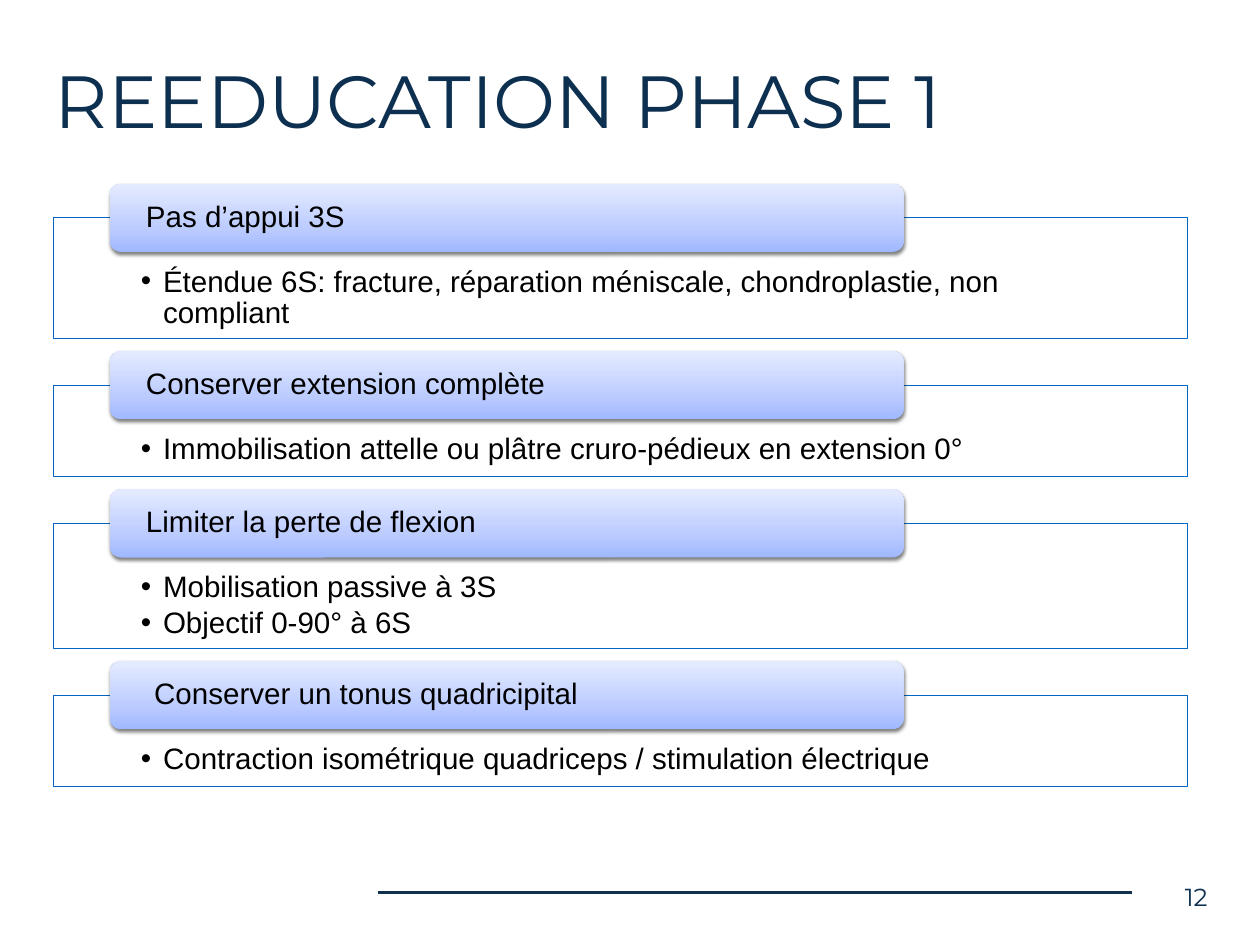
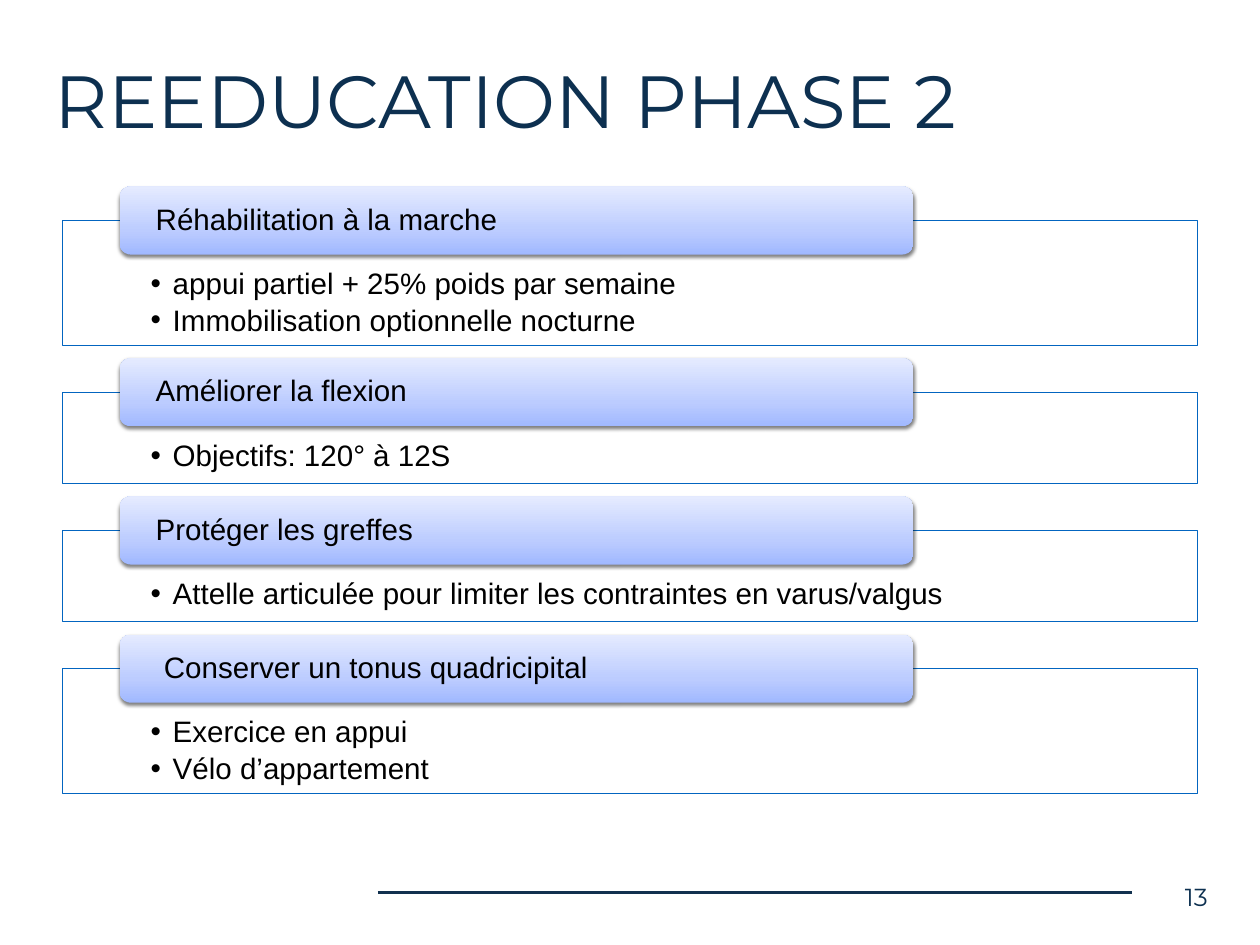
"""Builds two rehabilitation slides, one per phase, with titled step boxes."""
from copy import deepcopy
from dataclasses import dataclass

from lxml import etree
from pptx import Presentation
from pptx.dml.color import RGBColor
from pptx.enum.shapes import MSO_CONNECTOR, MSO_SHAPE
from pptx.enum.text import MSO_ANCHOR, PP_ALIGN
from pptx.oxml.ns import qn
from pptx.util import Inches, Pt

STRAIGHT = MSO_CONNECTOR.STRAIGHT
RECTANGLE, ROUNDED = MSO_SHAPE.RECTANGLE, MSO_SHAPE.ROUNDED_RECTANGLE
TOP, MIDDLE = MSO_ANCHOR.TOP, MSO_ANCHOR.MIDDLE
LEFT, RIGHT = PP_ALIGN.LEFT, PP_ALIGN.RIGHT

SLIDE_W, SLIDE_H = 14.22, 10.67
BOX_W, BOX_GAP = 12.8, 0.53
BOX_BASE_H, LINE_H, PARAGRAPH_H = 0.65, 0.33, 0.05
HEADER_W, HEADER_H = 0.7 * BOX_W, 0.77
HEADER_INDENT, HEADER_RISE = 0.05 * BOX_W, HEADER_H / 2
BULLET_INDENT = 0.25
SMALL_INSETS = (0.06, 0.06, 0.06, 0.06)
HEADER_INSETS = (0.37, 0, 0.37, 0)
BOX_INSETS = (0.99, 0.55, 0.99, 0.19)


@dataclass(frozen=True)
class Theme:
    """Colours, fonts and type sizes of the presentation."""
    title_ink: str = "0D3050"
    rule: str = "11314F"
    body_ink: str = "000000"
    box_fill: str = "FFFFFF"
    box_line: str = "0365C0"
    header_stops: tuple = ((0, "A0B8FF"), (0.35, "BCCCFF"), (1, "E5EBFF"))
    title_font: str = "Montserrat"
    body_font: str = "Arial"
    title_size: int = 60
    number_size: int = 20
    body_size: int = 24


THEME = Theme()

PHASES = [
    (12, "REEDUCATION PHASE 1", (0.6, 2.46), [
        ("Pas d’appui 3S",
         ["Étendue 6S: fracture, réparation méniscale, chondroplastie, non compliant"], 2),
        ("Conserver extension complète",
         ["Immobilisation attelle ou plâtre cruro-pédieux en extension 0°"], 1),
        ("Limiter la perte de flexion",
         ["Mobilisation passive à 3S", "Objectif 0-90° à 6S"], 2),
        (" Conserver un tonus quadricipital",
         ["Contraction isométrique quadriceps / stimulation électrique"], 1),
    ]),
    (13, "REEDUCATION PHASE 2", (0.71, 2.49), [
        ("Réhabilitation à la marche",
         ["appui partiel + 25% poids par semaine", "Immobilisation optionnelle nocturne"], 2),
        ("Améliorer la flexion", ["Objectifs: 120° à 12S"], 1),
        ("Protéger les greffes",
         ["Attelle articulée pour limiter les contraintes en varus/valgus"], 1),
        (" Conserver un tonus quadricipital",
         ["Exercice en appui", "Vélo d’appartement"], 2),
    ]),
]


def rgb(code):
    """Return the colour of a hexadecimal code."""
    return RGBColor.from_string(code)


def inches(*lengths):
    """Convert lengths in inches to slide units."""
    return [Inches(length) for length in lengths]


def write(shape, lines, font, size, ink, insets, anchor=TOP, align=LEFT):
    """Write paragraphs into a shape and format them."""
    frame = shape.text_frame
    frame.word_wrap = True
    frame.vertical_anchor = anchor
    (frame.margin_left, frame.margin_top,
     frame.margin_right, frame.margin_bottom) = inches(*insets)
    frame.text = "\n".join(lines)
    for paragraph in frame.paragraphs:
        paragraph.alignment = align
        for run in paragraph.runs:
            run.font.name = font
            run.font.size = Pt(size)
            run.font.color.rgb = rgb(ink)
    return frame.paragraphs


def add_bullet(paragraph):
    """Give a paragraph a hanging bullet."""
    properties = paragraph._p.get_or_add_pPr()
    properties.set("marL", str(Inches(BULLET_INDENT)))
    properties.set("indent", str(-Inches(BULLET_INDENT)))
    etree.SubElement(properties, qn("a:buFont"), typeface=THEME.body_font)
    etree.SubElement(properties, qn("a:buChar"), char="•")


def fill_gradient(shape, stops):
    """Fill a shape with a three-stop gradient rising from its bottom."""
    shape.fill.gradient()
    shape.fill.gradient_angle = 90
    stop_list = shape._element.spPr.find(qn("a:gradFill")).find(qn("a:gsLst"))
    stop_list.append(deepcopy(stop_list[0]))
    for stop, (position, code) in zip(shape.fill.gradient_stops, stops):
        stop.position = position
        stop.color.rgb = rgb(code)


def add_alpha(parent, percent):
    """Set the opacity of a colour element."""
    etree.SubElement(parent, qn("a:alpha"), val=str(percent * 1000))


def drop_shadow(shape):
    """Give a shape a soft shadow below it."""
    shape.shadow.inherit = False
    effects = shape._element.spPr.find(qn("a:effectLst"))
    shadow = etree.SubElement(effects, qn("a:outerShdw"), blurRad=str(Pt(3)),
                              dist=str(Pt(2)), dir="5400000", rotWithShape="0")
    add_alpha(etree.SubElement(shadow, qn("a:srgbClr"), val="000000"), 50)


def add_frame(slide, number, title):
    """Add the title, footer rule and slide number."""
    rule_y = 10.08
    rule = slide.shapes.add_connector(
        STRAIGHT, *inches(0.3 * SLIDE_W, rule_y, 0.9 * SLIDE_W - 0.02, rule_y))
    rule.line.color.rgb = rgb(THEME.rule)
    rule.line.width = Pt(2)
    etree.SubElement(rule._element.spPr, qn("a:effectLst"))
    number_box = slide.shapes.add_textbox(*inches(13.11, 9.9, 0.58, 0.45))
    write(number_box, [str(number)], THEME.title_font, THEME.number_size,
          THEME.title_ink, SMALL_INSETS, align=RIGHT)
    title_box = slide.shapes.add_textbox(*inches(0.56, 0.54, 13.11, 1.15))
    write(title_box, [title], THEME.title_font, THEME.title_size,
          THEME.title_ink, SMALL_INSETS, MIDDLE)


def add_box(slide, left, top, height, points):
    """Add the outlined box that lists the points of a step."""
    box = slide.shapes.add_shape(RECTANGLE, *inches(left, top, BOX_W, height))
    box.shadow.inherit = False
    box.fill.solid()
    box.fill.fore_color.rgb = rgb(THEME.box_fill)
    add_alpha(box._element.spPr.find(qn("a:solidFill"))[0], 90)
    box.line.color.rgb = rgb(THEME.box_line)
    box.line.width = Pt(0.75)
    for paragraph in write(box, points, THEME.body_font, THEME.body_size,
                           THEME.body_ink, BOX_INSETS):
        add_bullet(paragraph)
        paragraph.line_spacing = 0.9
        paragraph.space_after = Pt(3.6)


def add_header(slide, left, top, heading):
    """Add the gradient header that straddles the top of a box."""
    header = slide.shapes.add_shape(
        ROUNDED, *inches(left + HEADER_INDENT, top - HEADER_RISE, HEADER_W, HEADER_H))
    fill_gradient(header, THEME.header_stops)
    header.line.fill.background()
    drop_shadow(header)
    for paragraph in write(header, [heading], THEME.body_font, THEME.body_size,
                           THEME.body_ink, HEADER_INSETS, MIDDLE):
        paragraph.line_spacing = 0.9


def add_steps(slide, left, top, steps):
    """Stack the steps, each as tall as its lines and points need."""
    for heading, points, line_count in steps:
        height = BOX_BASE_H + line_count * LINE_H + len(points) * PARAGRAPH_H
        add_box(slide, left, top, height, points)
        add_header(slide, left, top, heading)
        top += height + BOX_GAP


def main():
    """Build and save the presentation."""
    deck = Presentation()
    deck.slide_width, deck.slide_height = inches(SLIDE_W, SLIDE_H)
    blank = deck.slide_layouts[6]
    for number, title, (left, top), steps in PHASES:
        slide = deck.slides.add_slide(blank)
        add_frame(slide, number, title)
        add_steps(slide, left, top, steps)
    deck.save("out.pptx")


if __name__ == "__main__":
    main()
